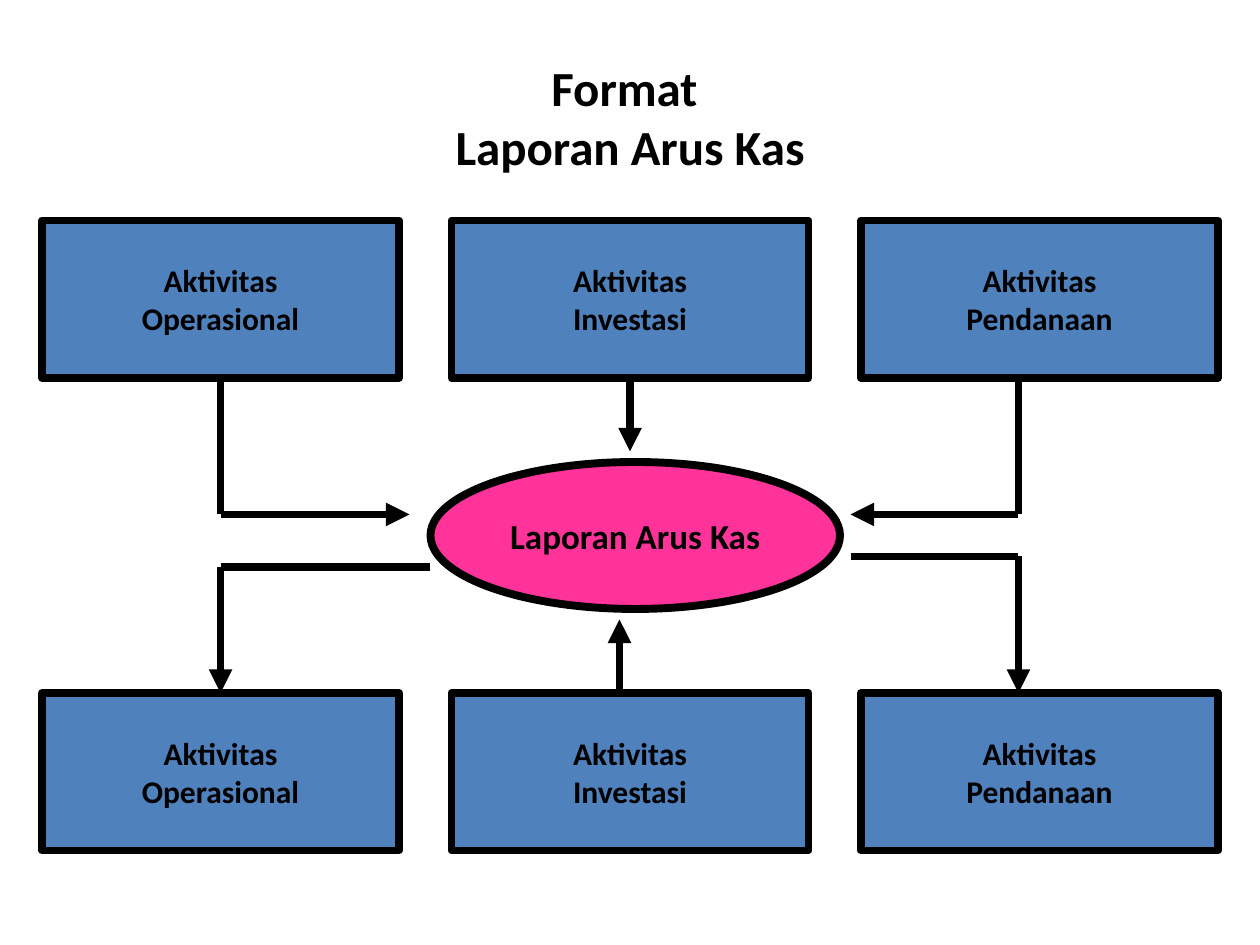
from copy import deepcopy

from pptx import Presentation
from pptx.dml.color import RGBColor
from pptx.enum.shapes import MSO_CONNECTOR, MSO_SHAPE
from pptx.enum.text import MSO_ANCHOR, MSO_AUTO_SIZE, PP_ALIGN
from pptx.oxml.ns import qn
from pptx.util import Inches, Pt
from lxml.etree import SubElement

BLACK = RGBColor(0x00, 0x00, 0x00)
BLUE = RGBColor(0x4F, 0x81, 0xBD)
PINK = RGBColor(0xFF, 0x33, 0x99)


def write_text(tf, paragraphs, size, font="Calibri", color=BLACK, bold=True, wrap=False):
    tf.word_wrap = wrap
    tf.auto_size = MSO_AUTO_SIZE.NONE
    tf.vertical_anchor = MSO_ANCHOR.MIDDLE
    for i, text in enumerate(paragraphs):
        p = tf.paragraphs[0] if i == 0 else tf.add_paragraph()
        p.text = text
        p.alignment = PP_ALIGN.CENTER
        for r in p.runs:
            r.font.name = font
            r.font.size = Pt(size)
            r.font.bold = bold
            r.font.color.rgb = color
        for br in p._p.findall(qn("a:br")):
            br.append(deepcopy(p.runs[0]._r.rPr))


class Diagram:
    unit = Inches(1) // 12
    line_width = Pt(4.5)
    line_color = BLACK

    def __init__(self, prs):
        self.slide = prs.slides.add_slide(prs.slide_layouts[5])

    def grid(self, *cells):
        return [int(self.unit * cell) for cell in cells]

    def outline(self, sp):
        sp.line.color.rgb = self.line_color
        sp.line.width = self.line_width

    def title(self, text, left, top, width, height):
        sp = self.slide.shapes.title
        sp.left, sp.top, sp.width, sp.height = self.grid(left, top, width, height)
        write_text(sp.text_frame, [text], 28, wrap=True)

    def node(self, shape, paragraphs, left, top, width, height, fill, size):
        sp = self.slide.shapes.add_shape(shape, *self.grid(left, top, width, height))
        sp.shadow.inherit = False
        sp.fill.solid()
        sp.fill.fore_color.rgb = fill
        self.outline(sp)
        write_text(sp.text_frame, paragraphs, size)

    def line(self, start, end, arrow=False):
        sp = self.slide.shapes.add_connector(
            MSO_CONNECTOR.STRAIGHT, *self.grid(*start, *end))
        self.outline(sp)
        if arrow:
            SubElement(sp.line._get_or_add_ln(), qn("a:tailEnd"), type="triangle")
        SubElement(sp._element.spPr, qn("a:effectLst"))

    def path_arrow(self, *points):
        last = len(points) - 2
        for i, (start, end) in enumerate(zip(points, points[1:])):
            self.line(start, end, arrow=i == last)


def main():
    prs = Presentation()
    prs.slide_width, prs.slide_height = Inches(10), Inches(7.5)
    diagram = Diagram(prs)
    diagram.title("Format \vLaporan Arus Kas", 6, 3.6, 108, 15)

    box_width, box_height, pitch = 34, 15, 39
    upper, lower = 21, 66
    for top in (upper, lower):
        for col, activity in enumerate(("Operasional", "Investasi", "Pendanaan")):
            diagram.node(MSO_SHAPE.RECTANGLE, ["Aktivitas", activity],
                         4 + col * pitch, top, box_width, box_height, BLUE, 18)
    diagram.node(MSO_SHAPE.OVAL, ["Laporan Arus Kas"], 41, 44, 39, 14, PINK, 20)

    upper_edge = upper + box_height
    left, right = 21, 97
    diagram.path_arrow((left, upper_edge), (left, 49), (39, 49))
    diagram.path_arrow((60, upper_edge), (60, 43))
    diagram.path_arrow((right, upper_edge), (right, 49), (81, 49))
    diagram.path_arrow((41, 54), (left, 54), (left, lower))
    diagram.path_arrow((59, lower), (59, 59))
    diagram.path_arrow((81, 53), (right, 53), (right, lower))

    prs.save("out.pptx")


if __name__ == "__main__":
    main()
